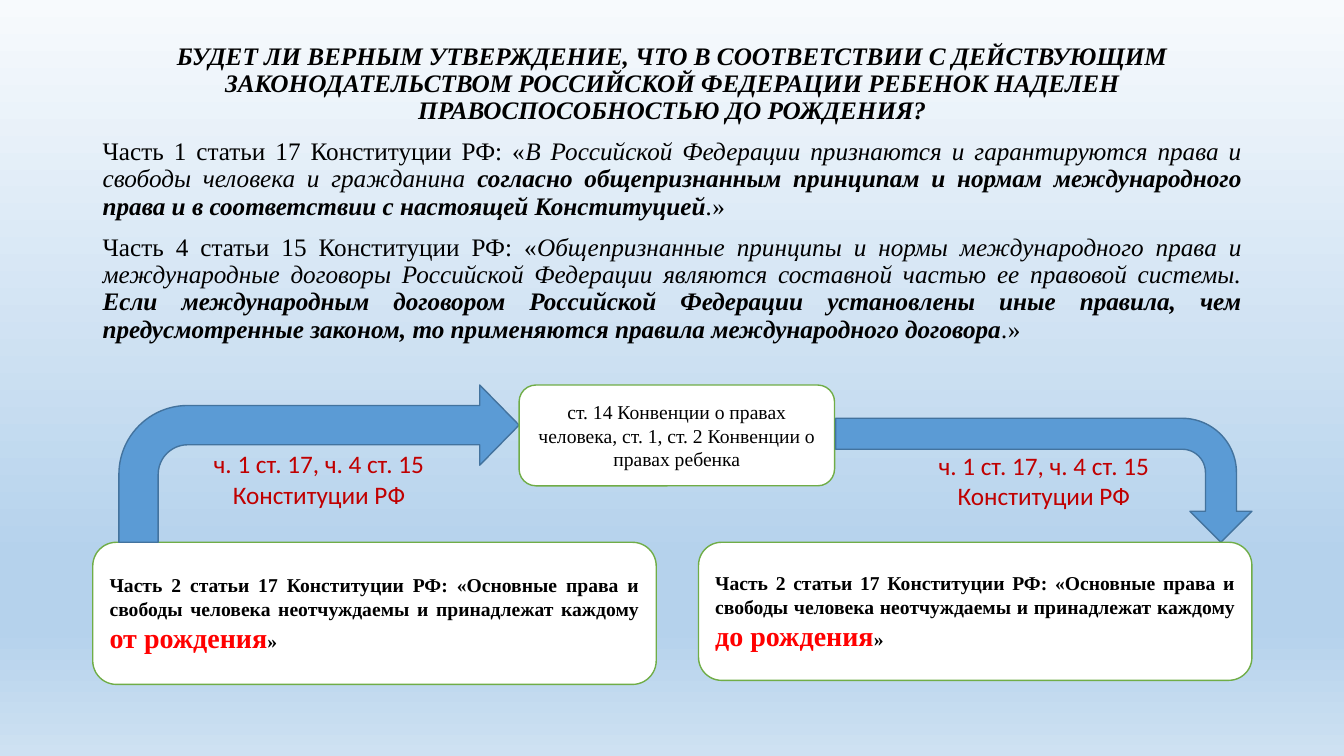
from dataclasses import dataclass

from lxml.etree import SubElement
from pptx import Presentation
from pptx.dml.color import RGBColor
from pptx.enum.shapes import MSO_SHAPE
from pptx.enum.text import MSO_ANCHOR, PP_ALIGN
from pptx.oxml.ns import qn
from pptx.util import Pt


@dataclass(frozen=True)
class Theme:
    serif: str = "Times New Roman"
    sans: str = "Calibri"
    black: str = "000000"
    white: str = "FFFFFF"
    red: str = "FF0000"
    dark_red: str = "C00000"
    green: str = "70AD47"
    blue: str = "5B9BD5"
    blue_line: str = "43739E"
    body_size: int = 18
    box_size: int = 14
    accent_size: int = 20
    sky: tuple = ((0, "F7FAFD"), (74, "B5D2EC"), (83, "B5D2EC"), (100, "CEE1F2"))


T = Theme()


def rgb(value):
    return RGBColor.from_string(value)


def set_background(s):
    fill = s.background.fill
    fill.gradient()
    fill.gradient_angle = 270
    stops = s.element.find(".//" + qn("a:gsLst"))
    for stop in list(stops):
        stops.remove(stop)
    for percent, color in T.sky:
        stop = SubElement(stops, qn("a:gs"), pos=str(percent * 1000))
        SubElement(stop, qn("a:srgbClr"), val=color)


def add_run(p, text, size, color=T.black, font=T.serif, bold=False, italic=False):
    r = p.add_run()
    r.text = text
    r.font.size = Pt(size)
    r.font.name = font
    r.font.color.rgb = rgb(color)
    r.font.bold = bold
    r.font.italic = italic


def next_paragraph(tf, first, align):
    p = tf.paragraphs[0] if first else tf.add_paragraph()
    p.alignment = align
    return p


def add_body(s, title, quotes):
    tf = s.shapes.add_textbox(Pt(66.24), Pt(27.36), Pt(828), Pt(458.64)).text_frame
    tf.word_wrap = True
    p = next_paragraph(tf, True, PP_ALIGN.CENTER)
    add_run(p, title, T.body_size, bold=True, italic=True)
    for source, quote, emphasis in quotes:
        p = next_paragraph(tf, False, PP_ALIGN.JUSTIFY)
        add_run(p, source, T.body_size)
        add_run(p, quote, T.body_size, italic=True)
        add_run(p, emphasis, T.body_size, bold=True, italic=True)
        add_run(p, ".", T.body_size, italic=True)
        add_run(p, "»", T.body_size)
    for p in tf.paragraphs:
        p.line_spacing = 0.9
        p.space_before = Pt(10)


def add_block(s, kind, place, fill, line):
    sp = s.shapes.add_shape(kind, *map(Pt, place))
    sp.shadow.inherit = False
    sp.fill.solid()
    sp.fill.fore_color.rgb = rgb(fill)
    sp.line.color.rgb = rgb(line)
    sp.line.width = Pt(1)
    sp.text_frame.word_wrap = True
    sp.text_frame.vertical_anchor = MSO_ANCHOR.MIDDLE
    return sp


def add_box(s, place):
    return add_block(s, MSO_SHAPE.ROUNDED_RECTANGLE, place, T.white, T.green)


def add_claim(s, place, text, accent):
    p = next_paragraph(add_box(s, place).text_frame, True, PP_ALIGN.JUSTIFY)
    add_run(p, text, T.box_size, bold=True)
    add_run(p, accent, T.accent_size, T.red, bold=True)
    add_run(p, "»", T.box_size, bold=True)


def add_link(s, place, adjustments, lines):
    sp = add_block(s, MSO_SHAPE.BENT_ARROW, place, T.blue, T.blue_line)
    for i, value in enumerate(adjustments):
        sp.adjustments[i] = value
    for i, line in enumerate(lines):
        p = next_paragraph(sp.text_frame, i == 0, PP_ALIGN.CENTER)
        add_run(p, line, T.body_size, T.dark_red, T.sans)
    return sp


def main():
    prs = Presentation()
    prs.slide_width, prs.slide_height = Pt(960), Pt(540)
    s = prs.slides.add_slide(prs.slide_layouts[6])
    set_background(s)

    add_body(
        s,
        "БУДЕТ ЛИ ВЕРНЫМ УТВЕРЖДЕНИЕ, ЧТО В СООТВЕТСТВИИ С ДЕЙСТВУЮЩИМ "
        "ЗАКОНОДАТЕЛЬСТВОМ РОССИЙСКОЙ ФЕДЕРАЦИИ РЕБЕНОК НАДЕЛЕН "
        "ПРАВОСПОСОБНОСТЬЮ ДО РОЖДЕНИЯ?",
        [
            (
                "Часть 1 статьи 17 Конституции РФ: «",
                "В Российской Федерации признаются и гарантируются права и свободы "
                "человека и гражданина ",
                "согласно общепризнанным принципам и нормам международного права и "
                "в соответствии с настоящей Конституцией",
            ),
            (
                "Часть 4 статьи 15 Конституции РФ: «",
                "Общепризнанные принципы и нормы международного права и международные "
                "договоры Российской Федерации являются составной частью ее правовой "
                "системы. ",
                "Если международным договором Российской Федерации установлены иные "
                "правила, чем предусмотренные законом, то применяются правила "
                "международного договора",
            ),
        ],
    )

    claim = ("Часть 2 статьи 17 Конституции РФ: «Основные права и свободы человека "
             "неотчуждаемы и принадлежат каждому ")
    grounds = ("ч. 1 ст. 17, ч. 4 ст. 15", "Конституции РФ")

    add_claim(s, (66.24, 387.36, 402.48, 101.52), claim, "от рождения")
    up = add_link(s, (84.96, 275.04, 285.84, 112.32), (0.25, 0.255, 0.25, 0.438), grounds)
    up.text_frame.margin_top = Pt(25.5)

    convention = add_box(s, (370.8, 275.04, 225.36, 72))
    p = next_paragraph(convention.text_frame, True, PP_ALIGN.CENTER)
    add_run(p, "ст. 14 Конвенции о правах человека, ст. 1, ст. 2 Конвенции о правах ребенка",
            T.box_size)

    down = add_link(s, (701.28, 194.4, 88.56, 297.36), (0.25, 0.25, 0.25, 0.4375), grounds)
    down.rotation = 90
    down.text_frame._txBody.bodyPr.set("vert", "vert270")
    add_claim(s, (498.96, 387.36, 395.28, 98.64), claim, "до рождения")

    prs.save("out.pptx")


if __name__ == "__main__":
    main()
